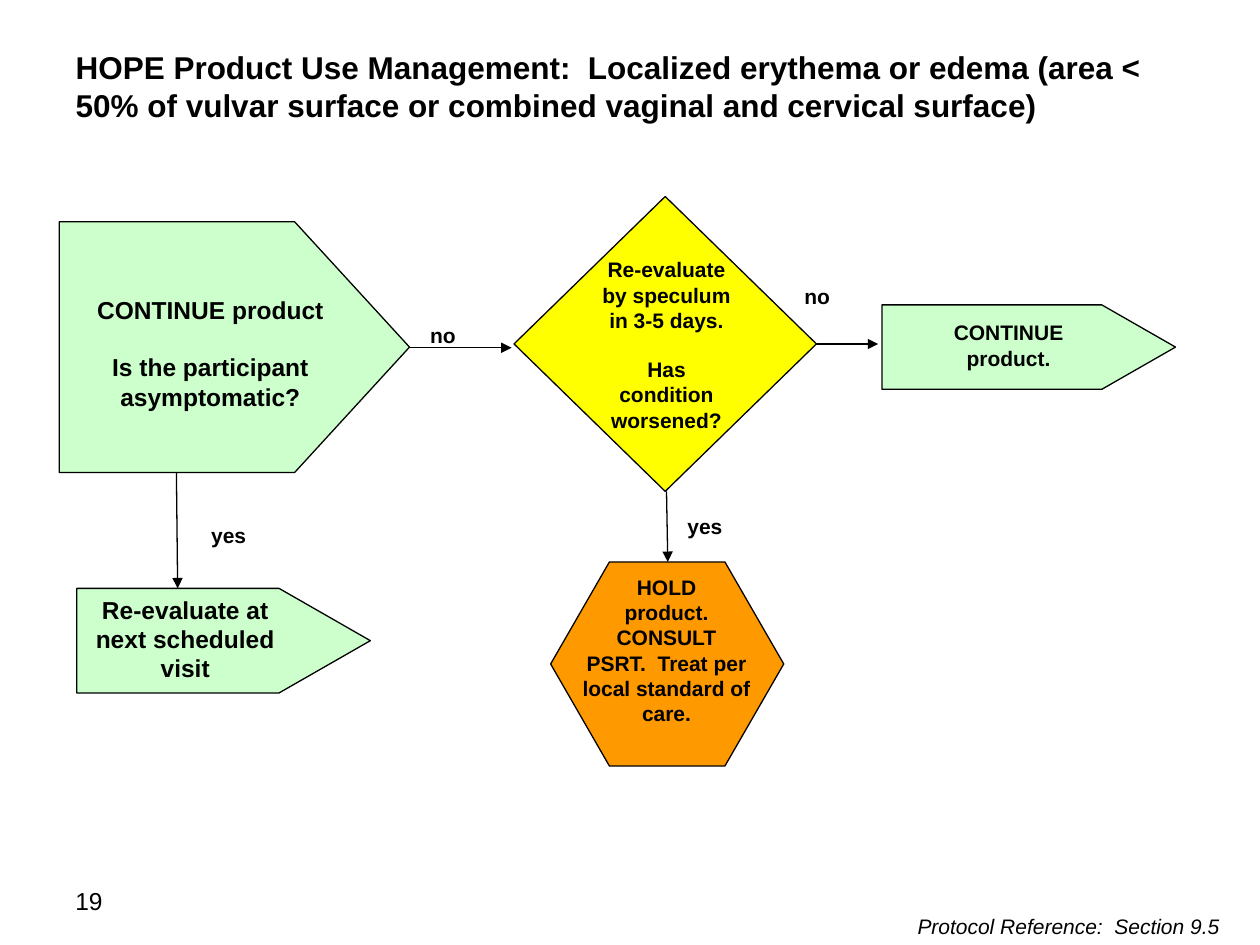
from dataclasses import dataclass
from typing import Optional

import pptx
import pptx.dml.color
import pptx.enum.shapes
import pptx.enum.text
import pptx.oxml
import pptx.oxml.ns
import pptx.util

Inches = pptx.util.Inches
Pt = pptx.util.Pt
Preset = pptx.enum.shapes.MSO_SHAPE
Align = pptx.enum.text.PP_ALIGN

BLACK, GREEN, YELLOW, ORANGE = "000000", "CCFFCC", "FFFF00", "FF9900"
FRAME_FORMAT = {
    "word_wrap": True,
    "auto_size": pptx.enum.text.MSO_AUTO_SIZE.NONE,
    "vertical_anchor": pptx.enum.text.MSO_ANCHOR.TOP,
    "margin_left": Inches(0.1),
    "margin_right": Inches(0.1),
    "margin_top": Inches(0.05),
    "margin_bottom": Inches(0.05),
}
LABEL_SIZE = (0.97, 0.3)


@dataclass
class Step:
    preset: int
    box: tuple[float, float, float, float]
    fill: str
    adjustment: Optional[float] = None


@dataclass
class Caption:
    lines: list[str]
    box: tuple[float, float, float, float]
    size: int = 12
    bold: bool = True
    italic: bool = False
    align: int = Align.CENTER
    gap_before_last: float = 0  # points


@dataclass
class Arrow:
    start: tuple[float, float]
    end: tuple[float, float]


STEPS = [
    Step(Preset.PENTAGON, (0.47, 1.76, 2.78, 1.99), GREEN, 0.458),
    Step(Preset.PENTAGON, (0.61, 4.67, 2.33, 0.83), GREEN, 0.873),
    Step(Preset.DIAMOND, (4.08, 1.56, 2.4, 2.34), YELLOW),
    Step(Preset.HEXAGON, (4.37, 4.46, 1.85, 1.62), ORANGE, 0.288),
    Step(Preset.PENTAGON, (7, 2.42, 2.33, 0.67), GREEN, 0.873),
]

ARROWS = [
    Arrow((3.25, 2.76), (4.06, 2.76)),
    Arrow((1.4, 3.75), (1.41, 4.67)),
    Arrow((5.29, 3.9), (5.3, 4.46)),
    Arrow((6.48, 2.73), (6.97, 2.73)),
]

CAPTIONS = [
    Caption(["CONTINUE product", "Is the participant asymptomatic?"],
            (0.5, 2.29, 2.34, 1.04), size=14, gap_before_last=16.1),
    Caption(["Re-evaluate at next scheduled visit"],
            (0.61, 4.67, 1.72, 0.81), size=14),
    Caption(["Re-evaluate by speculum in 3-5 days.", "Has condition worsened?"],
            (4.67, 1.99, 1.24, 1.51), gap_before_last=13.8),
    Caption(["HOLD", "product.", "CONSULT",
             "PSRT.  Treat per local standard of care."],
            (4.43, 4.51, 1.72, 1.31)),
    Caption(["CONTINUE product."], (7.14, 2.49, 1.73, 0.5)),
    # Answers beside the arrows
    Caption(["no"], (3.03, 2.51, *LABEL_SIZE)),
    Caption(["yes"], (1.33, 4.1, *LABEL_SIZE)),
    Caption(["yes"], (5.11, 4.03, *LABEL_SIZE)),
    Caption(["no"], (6, 2.2, *LABEL_SIZE)),
    # Footer
    Caption(["19"], (0.5, 6.98, 2.33, 0.52), size=14, bold=False,
            align=Align.LEFT),
    Caption(["Protocol Reference:  Section 9.5"], (6.03, 7.2, 3.75, 0.3),
            bold=False, italic=True, align=Align.RIGHT),
]

TITLE = Caption(
    ["HOPE Product Use Management:  Localized erythema or edema (area < 50% "
     "of vulvar surface or combined vaginal and cervical surface)"],
    (0.5, 0.33, 9, 0.71), size=18, align=Align.LEFT)


def rgb(color: str) -> pptx.dml.color.RGBColor:
    return pptx.dml.color.RGBColor.from_string(color)


def format_line(line) -> None:
    line.color.rgb = rgb(BLACK)
    line.width = Pt(0.75)


def write_caption(holder, caption: Caption) -> None:
    frame = holder.text_frame
    frame.text = "\n".join(caption.lines)
    for name, value in FRAME_FORMAT.items():
        setattr(frame, name, value)
    font_format = {"name": "Arial", "size": Pt(caption.size),
                   "bold": caption.bold, "italic": caption.italic}
    for paragraph in frame.paragraphs:
        paragraph.alignment = caption.align
        font = paragraph.runs[0].font
        for name, value in font_format.items():
            setattr(font, name, value)
        font.color.rgb = rgb(BLACK)
    if caption.gap_before_last:
        frame.paragraphs[-1].space_before = Pt(caption.gap_before_last)


def draw_title(slide, caption: Caption) -> None:
    title = slide.shapes.title
    for name, value in zip(("left", "top", "width", "height"), caption.box):
        setattr(title, name, Inches(value))
    write_caption(title, caption)


def draw_step(slide, step: Step) -> None:
    shape = slide.shapes.add_shape(step.preset, *map(Inches, step.box))
    shape.shadow.inherit = False
    shape.fill.solid()
    shape.fill.fore_color.rgb = rgb(step.fill)
    format_line(shape.line)
    if step.adjustment is not None:
        shape.adjustments[0] = step.adjustment


def draw_arrow(slide, arrow: Arrow) -> None:
    connector = slide.shapes.add_connector(
        pptx.enum.shapes.MSO_CONNECTOR.STRAIGHT,
        *map(Inches, (*arrow.start, *arrow.end)))
    format_line(connector.line)
    # Arrowhead at the end, and no shadow
    head = pptx.oxml.parse_xml(
        f'<a:tailEnd {pptx.oxml.ns.nsdecls("a")} type="triangle"/>')
    connector.line._get_or_add_ln().append(head)
    connector._element.spPr.append(pptx.oxml.parse_xml(
        f'<a:effectLst {pptx.oxml.ns.nsdecls("a")}/>'))


def draw_caption(slide, caption: Caption) -> None:
    write_caption(slide.shapes.add_textbox(*map(Inches, caption.box)), caption)


def main() -> None:
    deck = pptx.Presentation()
    deck.slide_width, deck.slide_height = Inches(10), Inches(7.5)
    slide = deck.slides.add_slide(deck.slide_layouts[5])

    draw_title(slide, TITLE)
    for step in STEPS:
        draw_step(slide, step)
    for arrow in ARROWS:
        draw_arrow(slide, arrow)
    for caption in CAPTIONS:
        draw_caption(slide, caption)

    deck.save("out.pptx")


if __name__ == "__main__":
    main()
